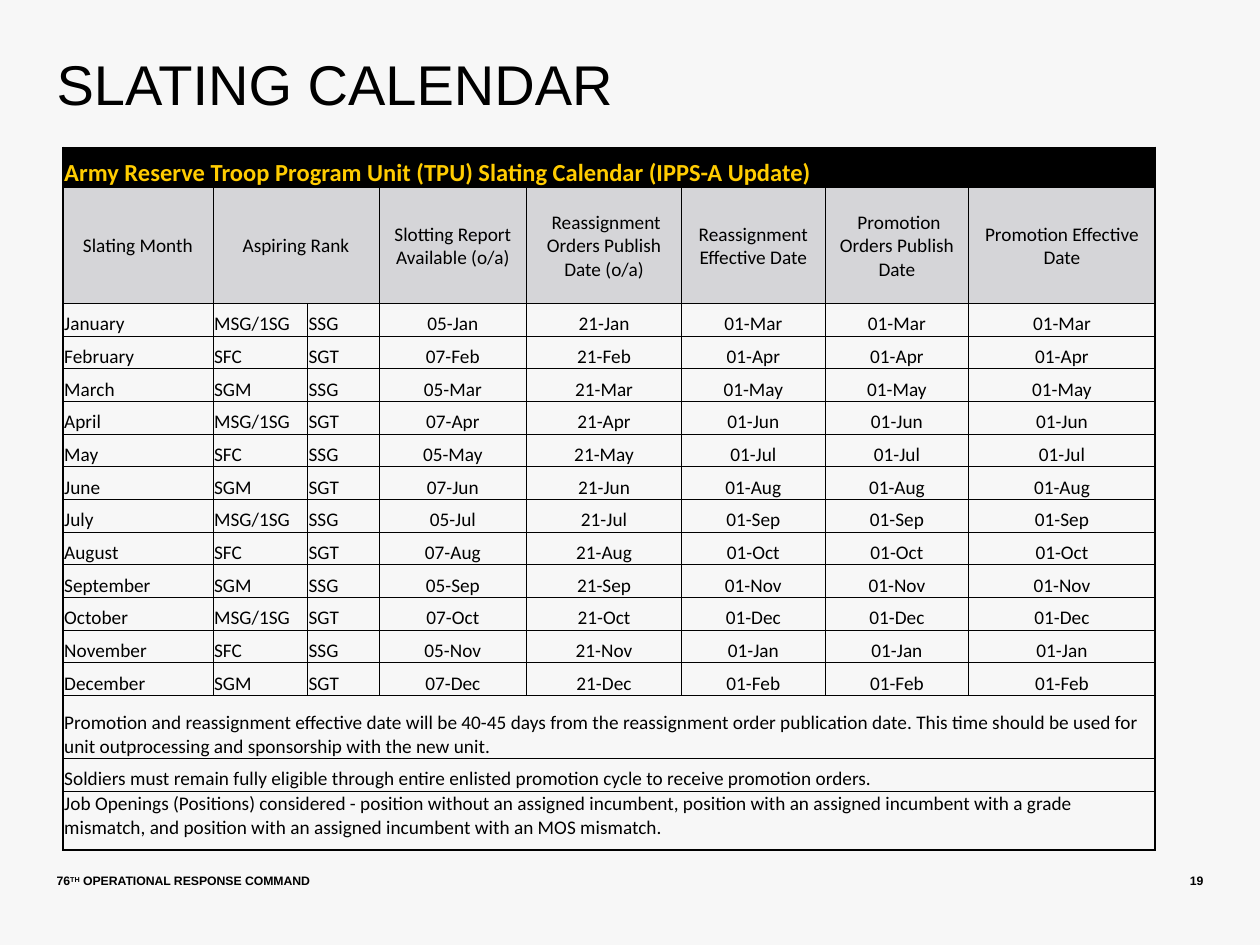
"""Build the slating calendar slide."""
import pptx
import pptx.dml.color
import pptx.enum.text
import pptx.oxml
import pptx.oxml.ns
import pptx.util

ALIGN = pptx.enum.text.PP_ALIGN
ANCHOR = pptx.enum.text.MSO_ANCHOR
MONTHS = ["January", "February", "March", "April", "May", "June", "July",
          "August", "September", "October", "November", "December"]
HEADINGS = ["Slating Month", "Aspiring Rank", None,
            "Slotting Report Available (o/a)",
            " Reassignment Orders Publish Date (o/a)",
            "Reassignment Effective Date",
            " Promotion Orders Publish Date", "Promotion Effective Date"]
NOTES = [
    "Promotion and reassignment effective date will be 40-45 days from the "
    "reassignment order publication date. This time should be used for unit "
    "outprocessing and sponsorship with the new unit.",
    "Soldiers must remain fully eligible through entire enlisted promotion "
    "cycle to receive promotion orders.",
    "Job Openings (Positions) considered - position without an assigned "
    "incumbent, position with an assigned incumbent with a grade mismatch, "
    "and position with an assigned incumbent with an MOS mismatch.",
]
COLUMN_WIDTHS = [1.19, 0.75, 0.57, 1.17, 1.23, 1.14, 1.14, 1.48]
TOP_HEIGHTS = [0.32, 0.92]
NOTE_HEIGHTS = [0.5, 0.26, 0.47]
TABLE_HEIGHT = 5.58


def color(value):
    return pptx.dml.color.RGBColor.from_string(value)


def write(frame, runs, size=11, font="Calibri", fill="000000", bold=False,
          align=ALIGN.LEFT, anchor=ANCHOR.BOTTOM, margins=(0, 0, 0, 0),
          spacing=None):
    frame.word_wrap = True
    frame.vertical_anchor = anchor
    (frame.margin_left, frame.margin_top,
     frame.margin_right, frame.margin_bottom) = map(pptx.util.Inches, margins)
    paragraph = frame.paragraphs[0]
    paragraph.alignment = align
    paragraph.line_spacing = spacing
    for text, baseline in [(runs, 0)] if isinstance(runs, str) else runs:
        run = paragraph.add_run()
        run.text = text
        run.font.size = pptx.util.Pt(size)
        run.font.name = font
        run.font.bold = bold
        run.font.color.rgb = color(fill)
        if baseline:
            run.font._element.set("baseline", str(baseline * 1000))


def set_borders(cell, widths):
    properties = cell._tc.get_or_add_tcPr()
    for side, width in zip("LRTB", widths):
        properties.append(pptx.oxml.parse_xml(
            f'<a:ln{side} {pptx.oxml.ns.nsdecls("a")} w="{pptx.util.Pt(width)}">'
            '<a:solidFill><a:srgbClr val="000000"/></a:solidFill>'
            f'</a:ln{side}>'))


class SlideBuilder:
    grid = 0.05
    heading_font = "Arial"

    def __init__(self, presentation):
        self.slide = presentation.slides.add_slide(presentation.slide_layouts[5])
        self.slide.background.fill.solid()
        self.slide.background.fill.fore_color.rgb = color("F7F7F7")

    def place(self, *cells):
        return [pptx.util.Inches(cell * self.grid) for cell in cells]

    def title(self, text, *box):
        shape = self.slide.shapes.title
        shape.left, shape.top, shape.width, shape.height = self.place(*box)
        write(shape.text_frame, text, size=32, font=self.heading_font,
              anchor=ANCHOR.TOP, spacing=0.9)
        shape.text_frame.auto_size = pptx.enum.text.MSO_AUTO_SIZE.NONE

    def footer(self, runs, *box, align=ALIGN.LEFT):
        shape = self.slide.shapes.add_textbox(*self.place(*box))
        write(shape.text_frame, runs, size=7, font=self.heading_font,
              bold=True, align=align)

    def table(self, rows, heights, left, top):
        shape = self.slide.shapes.add_table(
            len(rows), len(COLUMN_WIDTHS), *self.place(left, top),
            pptx.util.Inches(sum(COLUMN_WIDTHS)), pptx.util.Inches(sum(heights)))
        table = shape.table
        table.first_row = table.horz_banding = False
        for column, width in zip(table.columns, COLUMN_WIDTHS):
            column.width = pptx.util.Inches(width)
        for row, height in zip(table.rows, heights):
            row.height = pptx.util.Inches(height)
        for row, texts in enumerate(rows):
            for column, text in enumerate(texts):
                if text is not None:
                    self.cell(table, texts, row, column)

    def cell(self, table, texts, row, column):
        last_row, last_column = len(table.rows) - 1, len(texts) - 1
        end = column
        while end < last_column and texts[end + 1] is None:
            end += 1
        cell = table.cell(row, column)
        if end > column:
            cell.merge(table.cell(row, end))
        edges = (column == 0, end == last_column, row == 0, row == last_row)
        set_borders(cell, [1 if edge else 0.5 for edge in edges])
        style = {"margins": (0.01, 0.01, 0.01, 0)}
        fill = {0: "000000", 1: "D5D5D8"}.get(row)
        if fill:
            cell.fill.solid()
            cell.fill.fore_color.rgb = color(fill)
        else:
            cell.fill.background()
        if row == 0:
            style.update(size=14, fill="FFCC01", bold=True)
        elif row == 1:
            style.update(align=ALIGN.CENTER, anchor=ANCHOR.MIDDLE)
        elif column > 2:
            style.update(align=ALIGN.CENTER)
        if row == last_row:
            style.update(anchor=ANCHOR.TOP)
        anchor = style.pop("anchor", ANCHOR.BOTTOM)
        margins = style.pop("margins")
        write(cell.text_frame, texts[column], **style)
        cell.vertical_anchor = anchor
        (cell.margin_left, cell.margin_top,
         cell.margin_right, cell.margin_bottom) = map(pptx.util.Inches, margins)


def month_row(index):
    month = MONTHS[index]
    effective = f"01-{MONTHS[(index + 2) % 12][:3]}"
    return [month, ["MSG/1SG", "SFC", "SGM"][index % 3],
            ["SSG", "SGT"][index % 2],
            f"{['05', '07'][index % 2]}-{month[:3]}", f"21-{month[:3]}",
            effective, effective, effective]


def full_row(text):
    return [text] + [None] * (len(COLUMN_WIDTHS) - 1)


def main():
    presentation = pptx.Presentation()
    presentation.slide_width = pptx.util.Inches(10)
    presentation.slide_height = pptx.util.Inches(7.5)
    builder = SlideBuilder(presentation)
    builder.footer([("76", 0), ("TH", 30), (" OPERATIONAL RESPONSE COMMAND", 0)],
                   9, 137, 88, 4)
    builder.footer("19", 173.6, 137, 17.4, 4, align=ALIGN.RIGHT)
    builder.title("SLATING CALENDAR", 9, 9, 135, 20)
    heading = ("Army Reserve Troop Program Unit (TPU) Slating Calendar "
               "(IPPS-A Update)")
    rows = [full_row(heading), HEADINGS]
    rows += [month_row(index) for index in range(len(MONTHS))]
    rows += [full_row(note) for note in NOTES]
    month_height = (TABLE_HEIGHT - sum(TOP_HEIGHTS + NOTE_HEIGHTS)) / len(MONTHS)
    heights = TOP_HEIGHTS + [month_height] * len(MONTHS) + NOTE_HEIGHTS
    builder.table(rows, heights, 10, 23.4)
    presentation.save("out.pptx")


if __name__ == "__main__":
    main()
